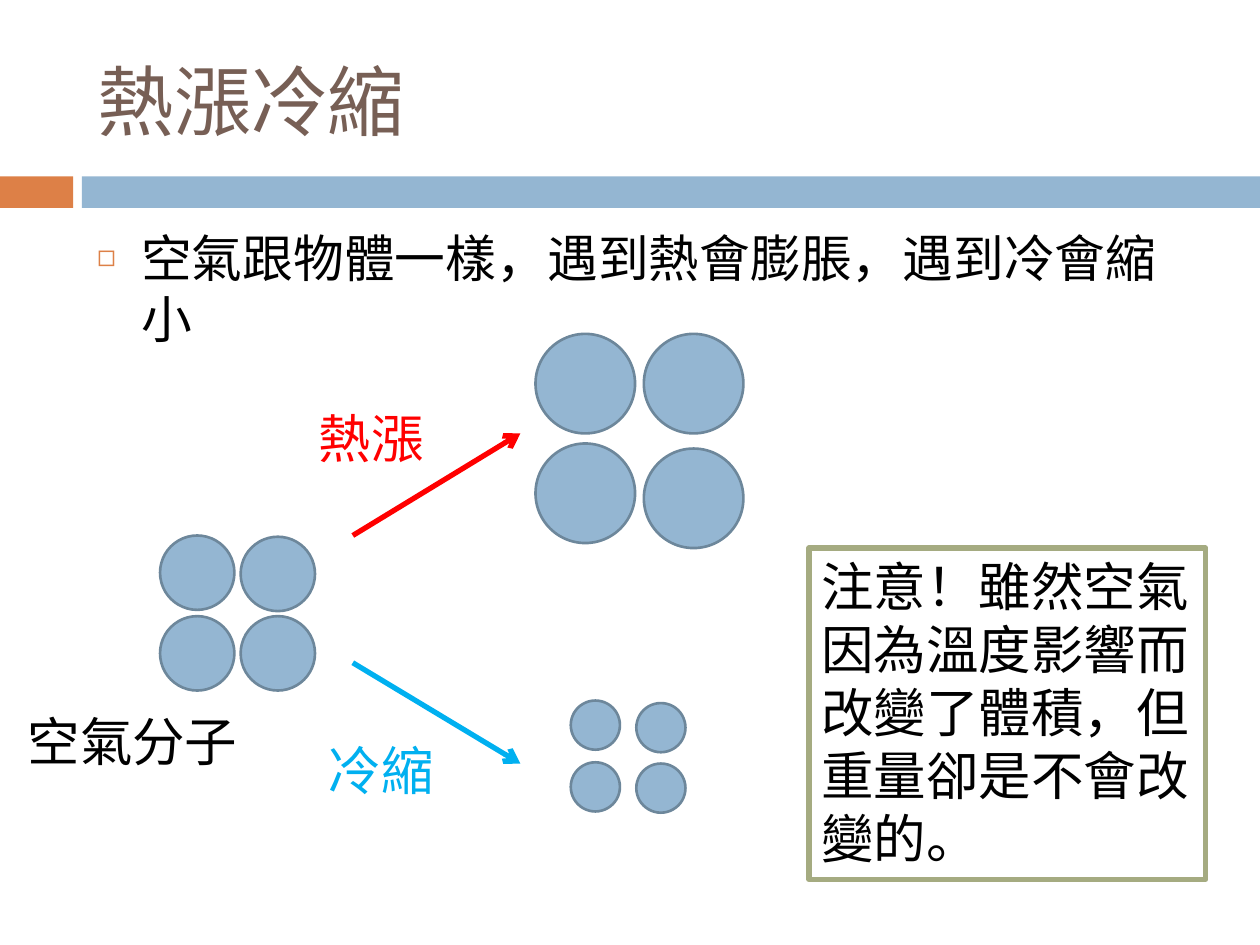
from pptx import Presentation
from pptx import util as u
from pptx.dml.color import RGBColor
from pptx.enum import shapes, text
from pptx.oxml.ns import qn
from lxml import etree

Inches = u.Inches
BLUE = RGBColor(0x94, 0xB6, 0xD2)
BLUE_EDGE = RGBColor(0x6D, 0x87, 0x9B)
ORANGE = RGBColor(0xDD, 0x80, 0x47)
BROWN = RGBColor(0x77, 0x5F, 0x55)
OLIVE = RGBColor(0xA5, 0xAB, 0x81)
HOT = RGBColor(0xFF, 0x00, 0x00)
COLD = RGBColor(0x00, 0xB0, 0xF0)
BLACK = RGBColor(0x00, 0x00, 0x00)
WHITE = RGBColor(0xFF, 0xFF, 0xFF)
FONT = "Cabin"


def write(holder, content, size=30, color=BLACK, wrap=False,
          anchor=text.MSO_ANCHOR.TOP, fit=text.MSO_AUTO_SIZE.SHAPE_TO_FIT_TEXT):
    """Fill a shape's text frame, one paragraph for each line of content."""
    frame = holder.text_frame
    frame.text = content
    frame.word_wrap = wrap
    frame.auto_size = fit
    frame.vertical_anchor = anchor
    for paragraph in frame.paragraphs:
        paragraph.alignment = text.PP_ALIGN.LEFT
        for run in paragraph.runs:
            run.font.name = FONT
            run.font.size = u.Pt(size)
            run.font.color.rgb = color


def place(holder, left, top, width, height):
    """Move and size a placeholder."""
    holder.left, holder.top = Inches(left), Inches(top)
    holder.width, holder.height = Inches(width), Inches(height)


def set_bullet(paragraph, char, color, percent, indent):
    """Give a paragraph a coloured bullet and a hanging indent."""
    props = paragraph._p.get_or_add_pPr()
    props.set("marL", str(Inches(indent)))
    props.set("indent", str(-Inches(indent)))
    bullet_color = etree.SubElement(props, qn("a:buClr"))
    etree.SubElement(bullet_color, qn("a:srgbClr"), val=str(color))
    etree.SubElement(props, qn("a:buSzPct"), val=str(percent * 1000))
    etree.SubElement(props, qn("a:buChar"), char=char)


def add_figure(parent, kind, left, top, width, height, fill, edge=None, weight=1.5):
    """Add a flat preset shape."""
    figure = parent.add_shape(kind, Inches(left), Inches(top), Inches(width), Inches(height))
    figure.shadow.inherit = False
    figure.fill.solid()
    figure.fill.fore_color.rgb = fill
    if edge is None:
        figure.line.fill.background()
    else:
        figure.line.color.rgb = edge
        figure.line.width = u.Pt(weight)
    return figure


def add_label(parent, content, left, top, width, color=BLACK):
    """Add a one-line text box."""
    label = parent.add_textbox(Inches(left), Inches(top), Inches(width), Inches(0.61))
    write(label, content, color=color)


def add_molecules(slide, columns, rows, size, drops):
    """Group four circles, the right-hand ones lowered by the given drops."""
    group = slide.shapes.add_group_shape().shapes
    for top, drop in zip(rows, drops):
        for left, shift in zip(columns, (0, drop)):
            add_figure(group, shapes.MSO_SHAPE.OVAL, left, top + shift, size, size,
                       BLUE, BLUE_EDGE)


def add_change(slide, content, color, start, end, label_at):
    """Group an arrow with its label."""
    group = slide.shapes.add_group_shape().shapes
    arrow = group.add_connector(shapes.MSO_CONNECTOR.STRAIGHT,
                                *(Inches(value) for value in start + end))
    arrow.line.color.rgb = color
    arrow.line.width = u.Pt(3)
    etree.SubElement(arrow.line._get_or_add_ln(), qn("a:tailEnd"), type="arrow")
    etree.SubElement(arrow._element.spPr, qn("a:effectLst"))
    add_label(group, content, *label_at, 1.04, color)


def main():
    """Build the slide and save it."""
    deck = Presentation()
    deck.slide_width, deck.slide_height = Inches(10), Inches(7.5)
    slide = deck.slides.add_slide(deck.slide_layouts[1])
    rectangle = shapes.MSO_SHAPE.RECTANGLE
    add_figure(slide.shapes, rectangle, 0, 1.4, 0.58, 0.25, ORANGE)
    add_figure(slide.shapes, rectangle, 0.65, 1.4, 9.35, 0.25, BLUE)

    heading, statement = slide.placeholders
    place(heading, 0.67, 0.25, 8.92, 1.08)
    write(heading, "熱漲冷縮", size=44, color=BROWN, wrap=True,
          anchor=text.MSO_ANCHOR.MIDDLE, fit=text.MSO_AUTO_SIZE.NONE)
    place(statement, 0.67, 1.75, 8.92, 4.92)
    write(statement, "空氣跟物體一樣，遇到熱會膨脹，遇到冷會縮小", size=29, wrap=True,
          fit=text.MSO_AUTO_SIZE.NONE)
    sentence = statement.text_frame.paragraphs[0]
    sentence.space_before = u.Pt(7)
    set_bullet(sentence, "◻", ORANGE, 60, 0.35)

    add_molecules(slide, (1.27, 1.91), (4.25, 4.89), 0.59, (0.01, 0))
    add_molecules(slide, (4.25, 5.11), (2.65, 3.52), 0.79, (0, 0.04))
    add_molecules(slide, (4.53, 5.05), (5.56, 6.05), 0.39, (0.02, 0.01))
    add_change(slide, "熱漲", HOT, (2.8, 4.25), (4.13, 3.44), (2.43, 3.17))
    add_change(slide, "冷縮", COLD, (2.8, 5.26), (4.13, 6.06), (2.51, 5.81))

    notice = add_figure(slide.shapes, rectangle, 6.42, 4.35, 3.15, 2.63, WHITE, OLIVE, 3)
    write(notice, "注意！雖然空氣\n因為溫度影響而\n改變了體積，但\n重量卻是不會改\n變的。")
    add_label(slide.shapes, "空氣分子", 0.12, 5.58, 1.88)
    deck.save("out.pptx")


if __name__ == "__main__":
    main()
